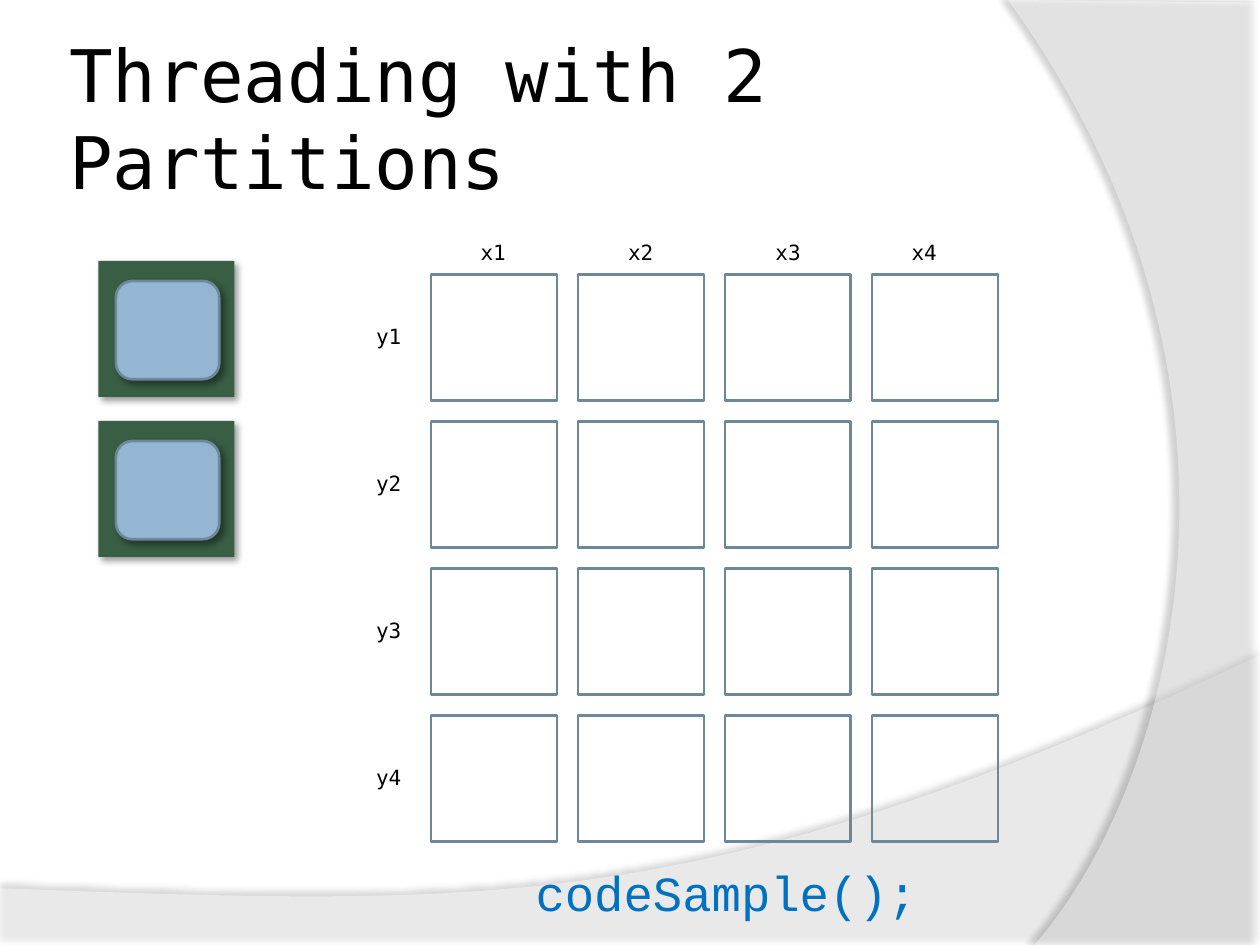
"""Build the slide that shows a 4 by 4 work grid and two partitions."""
from lxml import etree
from pptx import Presentation
from pptx import util as u
from pptx.dml.color import RGBColor
from pptx.enum import shapes, text
from pptx.oxml.ns import qn

COLORS = {"ink": "000000", "code": "0070C0", "edge": "6D879B",
          "core": "94B6D2", "frame": "385E44", "swoosh": "FFFFFF"}
LABEL_FONT = "DejaVu Sans Mono"
GRID_LEFT, GRID_TOP, CELL, PITCH = 3.42, 2.18, 1, 3.5 / 3


def color(name):
    return RGBColor.from_string(COLORS[name])


def inches(*lengths):
    return [u.Inches(length) for length in lengths]


def add_alpha(fill_color, percent):
    etree.SubElement(fill_color, qn("a:alpha"), val=str(percent * 1000))


def cast_shadow(shape, opacity, blur, distance, angle):
    effects = shape.element.spPr.find(qn("a:effectLst"))
    shadow = etree.SubElement(effects, qn("a:outerShdw"), blurRad=str(u.Pt(blur)),
                              dist=str(u.Pt(distance)), dir=str(angle * 60000),
                              algn="ctr", rotWithShape="0")
    add_alpha(etree.SubElement(shadow, qn("a:srgbClr"), val=COLORS["ink"]), opacity)


def style(shape, fill=None, line=None):
    shape.shadow.inherit = False
    if fill:
        shape.fill.solid()
        shape.fill.fore_color.rgb = color(fill)
    else:
        shape.fill.background()
    if line:
        shape.line.color.rgb = color(line)
        shape.line.width = u.Pt(1.5)
    else:
        shape.line.fill.background()


def add_box(slide, box, fill=None, line=None, kind=shapes.MSO_SHAPE.RECTANGLE):
    shape = slide.shapes.add_shape(kind, *inches(*box))
    style(shape, fill, line)
    return shape


def bezier(points, steps=60):
    """Return points along a cubic curve."""
    weights = (1, 3, 3, 1)
    return [tuple(sum(w * (1 - t) ** (3 - i) * t ** i * point[axis]
                      for i, (w, point) in enumerate(zip(weights, points)))
                  for axis in (0, 1))
            for t in (step / steps for step in range(steps + 1))]


def add_swoosh(slide, corners, curve, opacity, shadow):
    outline = [inches(*point) for point in corners + bezier(curve)]
    builder = slide.shapes.build_freeform(*outline[0], scale=1.0)
    builder.add_line_segments(outline[1:], close=True)
    swoosh = builder.convert_to_shape()
    style(swoosh, "swoosh")
    add_alpha(swoosh.element.spPr.find(".//" + qn("a:srgbClr")), opacity)
    cast_shadow(swoosh, *shadow)


def write(frame, words, size, font, ink, align):
    paragraph = frame.paragraphs[0]
    paragraph.alignment = align
    run = paragraph.add_run()
    run.text = words
    run.font.size = u.Pt(size)
    run.font.name = font
    run.font.color.rgb = color(ink)


def add_label(slide, words, box, size=12, font=LABEL_FONT, ink="ink"):
    frame = slide.shapes.add_textbox(*inches(*box)).text_frame
    frame.word_wrap = True
    frame.auto_size = text.MSO_AUTO_SIZE.SHAPE_TO_FIT_TEXT
    write(frame, words, size, font, ink, text.PP_ALIGN.CENTER)


def set_title(slide, words):
    title = slide.shapes.title
    title.left, title.top, title.width, title.height = inches(0.5, 0.3, 8.17, 1.25)
    frame = title.text_frame
    frame.word_wrap = True
    frame.auto_size = text.MSO_AUTO_SIZE.NONE
    frame.vertical_anchor = text.MSO_ANCHOR.MIDDLE
    frame.margin_left = frame.margin_right = u.Inches(0.05)
    frame.margin_top = frame.margin_bottom = u.Inches(0.05)
    write(frame, words, 41.4, LABEL_FONT, "ink", text.PP_ALIGN.LEFT)


def add_grid(slide, count=4):
    for row in range(count):
        for column in range(count):
            add_box(slide, (GRID_LEFT + column * PITCH, GRID_TOP + row * PITCH,
                            CELL, CELL), line="edge")
    for index, column_left in enumerate((3.58, 4.75, 5.92, 7)):
        add_label(slide, f"x{index + 1}", (column_left, 1.85, 0.67, 0.3))
        add_label(slide, f"y{index + 1}", (2.75, 2.52 + index * PITCH, 0.67, 0.3))


def add_partition(slide, top):
    frame = add_box(slide, (0.78, top, 1.08, 1.08), "frame")
    core = add_box(slide, (0.92, top + 0.16, 0.82, 0.78), "core", "edge",
                   shapes.MSO_SHAPE.ROUNDED_RECTANGLE)
    for part in (frame, core):
        cast_shadow(part, 40, 4, 3, 45)


def main():
    deck = Presentation()
    deck.slide_width, deck.slide_height = inches(10, 7.5)
    slide = deck.slides.add_slide(deck.slide_layouts[5])
    add_swoosh(slide, [(0, 7.05), (0, 7.51), (10, 7.51)],
               [(10, 5.2), (5.59, 7.29), (3.91, 7.19), (0, 7.05)],
               45, (35, 4, 3.5, 270))
    add_swoosh(slide, [(10, 0.02), (10, 7.5)],
               [(8.21, 7.5), (9.35, 6.19), (10.18, 3), (8, 0)],
               40, (45, 4, 4, 180))
    set_title(slide, "Threading with 2 Partitions")
    add_grid(slide)
    for top in (2.07, 3.34):
        add_partition(slide, top)
    add_label(slide, "codeSample();", (2.89, 6.8, 5.75, 0.57),
              28, "Courier New", "code")
    deck.save("out.pptx")


if __name__ == "__main__":
    main()
